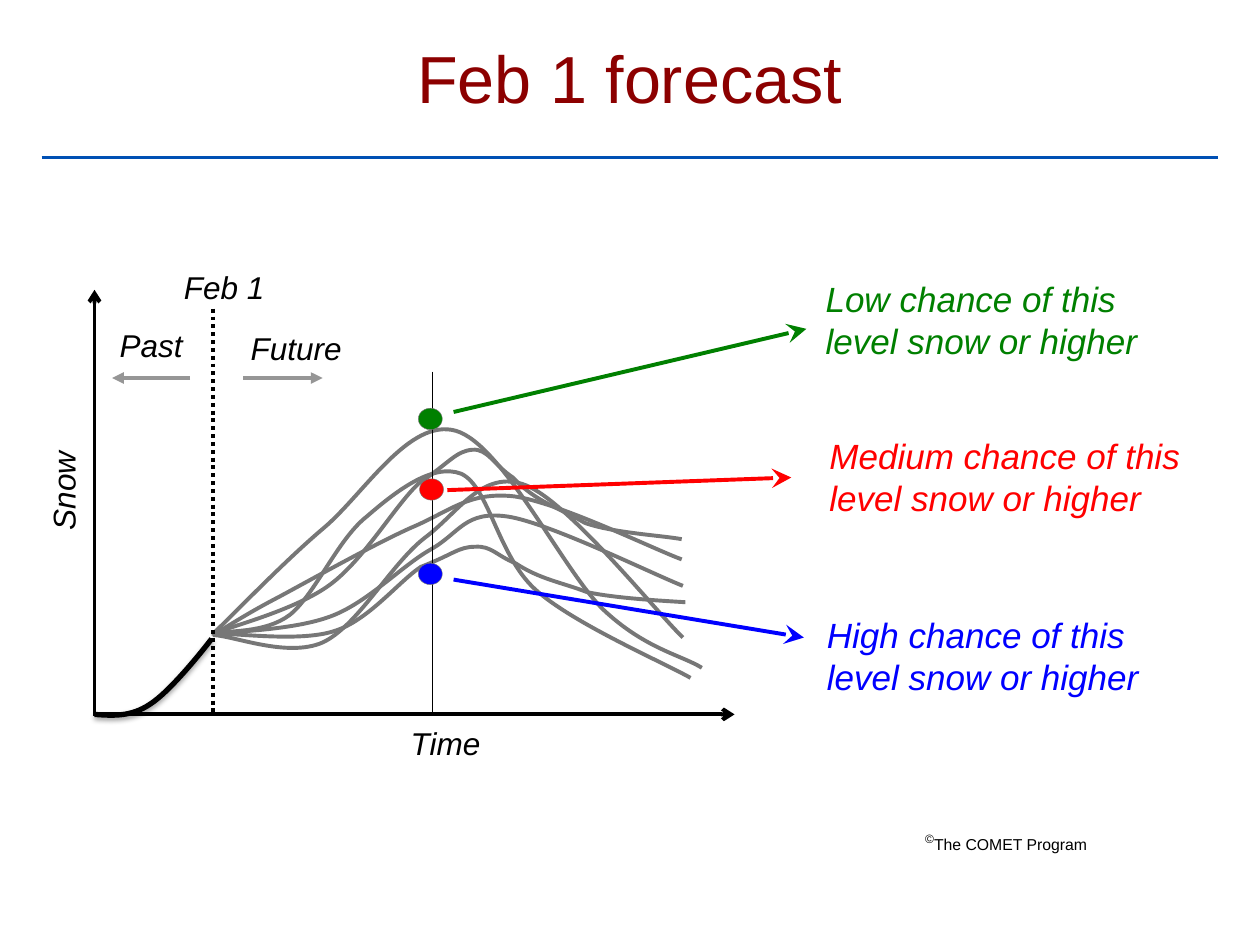
from lxml import etree
from pptx import Presentation
from pptx import util as u
from pptx.dml.color import RGBColor
from pptx.enum import dml, shapes, text
from pptx.oxml.ns import qn

INCH = 2.54  # the layout grid is one inch, given in cm
INK = {"black": "000000", "title": "8C0000", "rule": "0050B4",
       "curve": "777777", "arrow": "969696",
       "low": "008000", "medium": "FF0000", "high": "0000FF"}
INK = {name: RGBColor.from_string(code) for name, code in INK.items()}

deck = Presentation()
deck.slide_width, deck.slide_height = u.Cm(25.4), u.Cm(19.05)
slide = deck.slides.add_slide(deck.slide_layouts[6])
parts = slide.shapes


def label(words, box, ink="black", size=18, inset=0, wrap=False, slant=True):
    shape = parts.add_textbox(*[u.Cm(v * INCH) for v in box])
    frame = shape.text_frame
    frame.text = words
    frame.word_wrap = wrap
    frame.auto_size = text.MSO_AUTO_SIZE.SHAPE_TO_FIT_TEXT
    frame.margin_left = frame.margin_right = u.Cm(inset * 2)
    frame.margin_top = frame.margin_bottom = u.Cm(inset)
    for run in frame.paragraphs[0].runs:
        run.font.name, run.font.size = "Arial", u.Pt(size)
        run.font.italic = slant
        run.font.color.rgb = INK[ink]
    return shape


def line(ends, ink="black", width=2.25, tip=None, span="med"):
    shape = parts.add_connector(shapes.MSO_CONNECTOR.STRAIGHT,
                                *[u.Cm(v * INCH) for v in ends])
    shape.line.color.rgb = INK[ink]
    shape.line.width = u.Pt(width)
    if tip:
        etree.SubElement(shape.line._get_or_add_ln(), qn("a:tailEnd"),
                         type=tip, w=span, len=span)
    etree.SubElement(shape._element.spPr, qn("a:effectLst"))
    return shape


# Title and rule
line((0.33, 1.25, 9.67, 1.25), "rule")
title = label("Feb 1 forecast", (0.5, 0.23, 9, 0.76), "title", 38, 0.13, True, False)
title.text_frame.auto_size = text.MSO_AUTO_SIZE.NONE
title.text_frame.vertical_anchor = text.MSO_ANCHOR.MIDDLE
title.text_frame.paragraphs[0].alignment = text.PP_ALIGN.CENTER

# Axes
label("Snow", (0.05, 3.66, 0.9, 0.4), inset=0.13).rotation = 270
line((0.75, 5.66, 0.75, 2.3), tip="arrow")
line((0.74, 5.67, 5.83, 5.67), tip="arrow")
label("Time", (3.26, 5.75, 1.16, 0.3), wrap=True)

# Forecast curves and, last, the past: a start, then three points per Bezier piece
paths = [
    [(1.68, 5.03), (1.84, 5.02), (2.37, 5.1), (2.65, 5.01), (2.92, 4.93),
     (3.16, 4.62), (3.34, 4.5), (3.6, 4.4), (3.64, 4.34), (3.77, 4.34),
     (3.9, 4.33), (3.94, 4.41), (4.09, 4.47), (4.29, 4.6), (4.45, 4.62),
     (4.66, 4.7), (4.89, 4.75), (5.28, 4.77), (5.44, 4.78)],
    [(1.69, 5.03), (1.84, 4.97), (2.35, 4.84), (2.62, 4.64), (2.89, 4.44),
     (3.13, 4.02), (3.32, 3.84), (3.57, 3.67), (3.62, 3.58), (3.75, 3.57),
     (3.87, 3.56), (3.92, 3.69), (4.07, 3.79), (4.26, 3.99), (4.42, 4.02),
     (4.64, 4.15), (4.86, 4.23), (5.25, 4.25), (5.41, 4.28)],
    [(1.69, 5.03), (1.84, 4.89), (2.25, 4.46), (2.57, 4.19), (2.89, 3.92),
     (3.25, 3.31), (3.62, 3.42), (3.99, 3.53), (4.47, 4.53), (4.79, 4.84),
     (5.12, 5.15), (5.41, 5.2), (5.57, 5.3)],
    [(5.42, 5.06), (5.21, 4.86), (4.51, 3.98), (4.17, 3.85), (3.83, 3.72),
     (3.64, 4.07), (3.37, 4.27), (3.1, 4.48), (2.84, 4.97), (2.56, 5.1),
     (2.28, 5.22), (1.87, 5.05), (1.69, 5.04)],
    [(5.48, 5.38), (5.27, 5.26), (4.55, 4.95), (4.25, 4.68), (3.95, 4.41),
     (3.88, 3.86), (3.66, 3.76), (3.43, 3.67), (3.13, 3.91), (2.91, 4.1),
     (2.68, 4.28), (2.5, 4.72), (2.3, 4.88), (2.1, 5.03), (1.81, 5), (1.69, 5.03)],
    [(5.42, 4.65), (5.19, 4.56), (4.36, 4.15), (4.03, 4.1), (3.69, 4.05),
     (3.65, 4.23), (3.42, 4.36), (3.19, 4.49), (2.92, 4.78), (2.63, 4.89),
     (2.34, 5), (1.88, 5.01), (1.69, 5.03)],
    [(5.41, 4.44), (5.19, 4.36), (4.44, 3.99), (4.08, 3.94), (3.72, 3.9),
     (3.57, 4.06), (3.26, 4.19), (2.95, 4.33), (2.47, 4.6), (2.21, 4.74),
     (1.94, 4.88), (1.78, 4.99), (1.69, 5.04)],
    [(0.75, 5.67), (0.9, 5.68), (1.04, 5.69), (1.19, 5.59), (1.35, 5.49),
     (1.62, 5.15), (1.68, 5.07)],
]
for path in paths:
    spots = [(u.Cm(x * INCH), u.Cm(y * INCH)) for x, y in path]
    pen = parts.build_freeform(*spots[0])
    pen.add_line_segments(spots[1:], close=False)
    curve = pen.convert_to_shape()
    curve.shadow.inherit = False
    curve.fill.background()
    curve.line.color.rgb = INK["curve"]
    curve.line.width = u.Pt(2.25)
    # Join each three straight steps into one Bezier piece
    steps = list(curve._element.iter(qn("a:lnTo")))
    for i in range(0, len(steps), 3):
        bend = etree.Element(qn("a:cubicBezTo"))
        steps[i].addprevious(bend)
        for step in steps[i:i + 3]:
            bend.append(step[0])
            step.getparent().remove(step)

# The past is heavy and black, with a soft shadow
curve.line.color.rgb = INK["black"]
curve.line.width = u.Pt(3)
shade = etree.SubElement(curve._element.spPr.find(qn("a:effectLst")),
                         qn("a:outerShdw"), blurRad=str(u.Pt(3.1)),
                         dist=str(u.Pt(1.6)), dir="5400000", rotWithShape="0")
tone = etree.SubElement(shade, qn("a:srgbClr"), val=str(INK["black"]))
etree.SubElement(tone, qn("a:alpha"), val="38000")

# Past and future
label("Future", (1.99, 2.61, 0.76, 0.3))
label("Feb 1", (1.46, 2.13, 0.69, 0.3))
label("Past", (0.95, 2.59, 0.52, 0.3))
line((1.69, 2.45, 1.69, 5.68)).line.dash_style = dml.MSO_LINE.ROUND_DOT
line((1.51, 3, 0.89, 3), "arrow", tip="triangle")
line((1.93, 3, 2.56, 3), "arrow", tip="triangle")

# Chance levels: note, arrow and dot on the time line
line((3.43, 2.95, 3.43, 5.68), width=0.75)
levels = [
    ("low", (6.45, 2.15, 2.8, 0.77), (3.6, 3.27, 6.4, 2.61), (3.32, 3.24)),
    ("high", (6.46, 4.82, 2.79, 0.77), (3.6, 4.6, 6.38, 5.06), (3.32, 4.47)),
    ("medium", (6.48, 3.4, 3.19, 0.77), (3.55, 3.89, 6.28, 3.79), (3.33, 3.8)),
]
for name, box, ends, spot in levels:
    label(f"{name.title()} chance of this level snow or higher",
          box, name, 20, 0.13, True)
    line(ends, name, tip="stealth", span="lg")
    dot = parts.add_shape(shapes.MSO_SHAPE.OVAL,
                          *[u.Cm(v * INCH) for v in (*spot, 0.19, 0.17)])
    dot.shadow.inherit = False
    dot.fill.solid()
    dot.fill.fore_color.rgb = INK[name]
    dot.line.color.rgb = INK["curve"]
    dot.line.width = u.Pt(0.25)

# Credit
note = label("©", (7.24, 6.53, 2.14, 0.25), size=12, inset=0.13, wrap=True, slant=False)
para = note.text_frame.paragraphs[0]
para.runs[0].font._element.set("baseline", "30000")
run = para.add_run()
run.text = "The COMET Program"
run.font.name, run.font.size = "Arial", u.Pt(9)
run.font.color.rgb = INK["black"]

deck.save("out.pptx")
